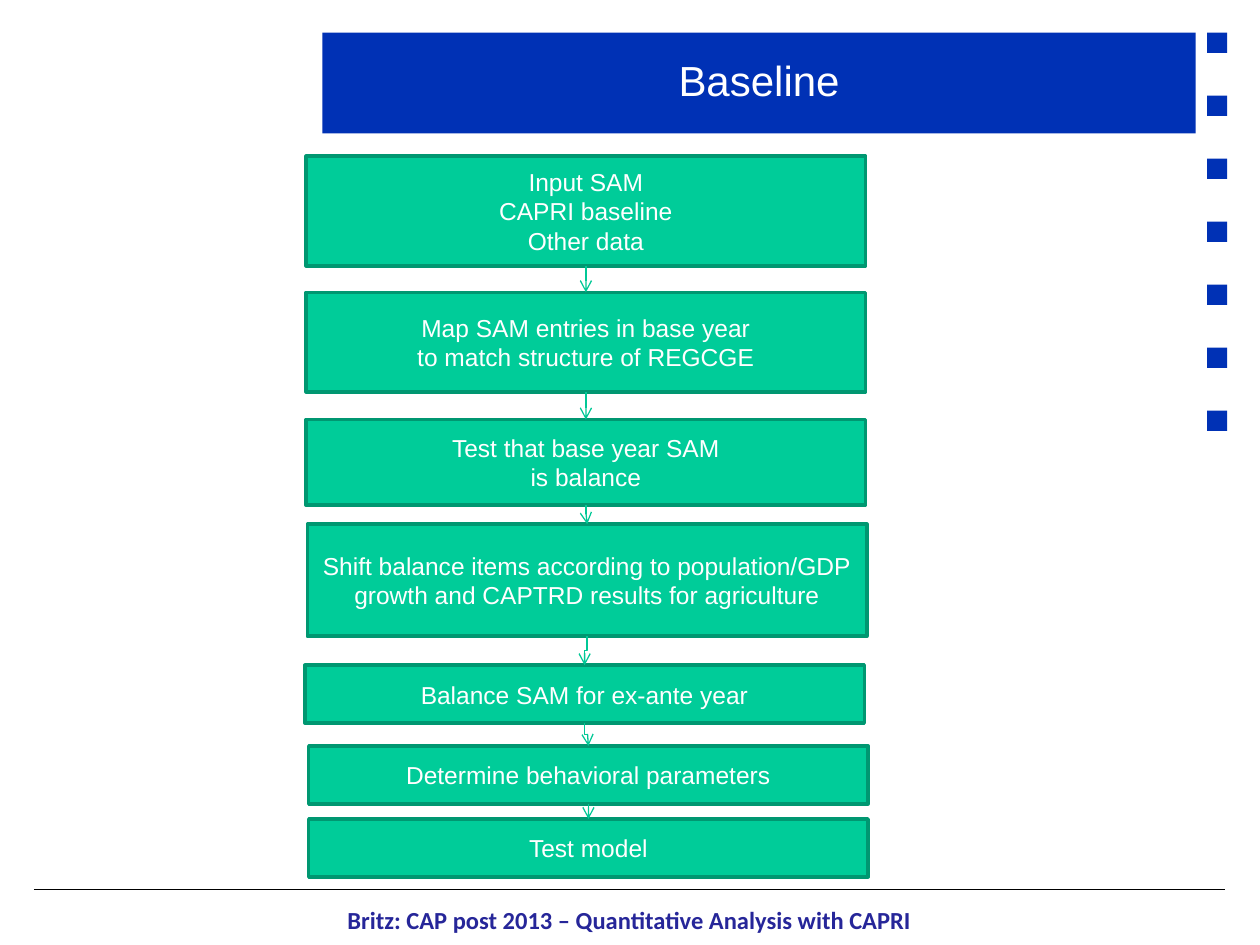
from lxml.etree import SubElement
from pptx import Presentation
from pptx.dml.color import RGBColor
from pptx.enum.shapes import MSO_CONNECTOR, MSO_SHAPE
from pptx.enum.text import MSO_ANCHOR, PP_ALIGN
from pptx.oxml.ns import qn
from pptx.util import Pt

PX = 9144
BLUE, GREEN, DARK_GREEN, ARROW_GREEN = "0031B5", "00CC99", "009771", "00C896"
STEP_WIDTH = 444
STEPS = [
    ("Input SAM\nCAPRI baseline\nOther data", 243, 124, 87),
    ("Map SAM entries in base year\nto match structure of REGCGE", 243, 232, 79),
    ("Test that base year SAM\vis balance", 243, 333, 68),
    ("Shift balance items according to population/GDP\n"
     "growth and CAPTRD results for agriculture", 244, 416, 89),
    ("Balance SAM for ex-ante year", 242, 528, 46),
    ("Determine behavioral parameters", 245, 592, 46),
    ("Test model", 245, 650, 46),
]


def emu(*lengths):
    """Turn px lengths into EMU."""
    return [length * PX for length in lengths]


def color(hex_value):
    """Turn a hex string into a colour."""
    return RGBColor.from_string(hex_value)


def write(frame, text, size=14, font="Arial", ink="FFFFFF", bold=False, spacing=None):
    """Fill a text frame with centred, formatted paragraphs."""
    frame.word_wrap = True
    frame.vertical_anchor = MSO_ANCHOR.MIDDLE
    frame.text = text
    for paragraph in frame.paragraphs:
        paragraph.alignment = PP_ALIGN.CENTER
        paragraph.line_spacing = spacing
        for run in paragraph.runs:
            run.font.size = Pt(size)
            run.font.name = font
            run.font.bold = bold
            run.font.color.rgb = color(ink)


def add_box(slide, left, top, width, height, fill, outline=None):
    """Add a flat rectangle with an optional outline."""
    box = slide.shapes.add_shape(MSO_SHAPE.RECTANGLE, *emu(left, top, width, height))
    box.shadow.inherit = False
    box.fill.solid()
    box.fill.fore_color.rgb = color(fill)
    if outline:
        box.line.color.rgb = color(outline)
        box.line.width = Pt(2)
    else:
        box.line.fill.background()
    return box


def add_line(slide, kind, ends, ink):
    """Add a thin connector without a shadow."""
    line = slide.shapes.add_connector(kind, *emu(*ends))
    line.line.color.rgb = color(ink)
    line.line.width = Pt(0.75)
    SubElement(line._element.spPr, qn("a:effectLst"))
    return line


def add_step_arrow(slide, source, target):
    """Glue a vertical elbow arrow between two steps."""
    arrow = add_line(slide, MSO_CONNECTOR.ELBOW, (0, 0, 0, 0), ARROW_GREEN)
    arrow.begin_connect(source, 2)
    arrow.end_connect(target, 0)
    shift = arrow.end_x - arrow.begin_x
    drop = arrow.end_y - arrow.begin_y
    center_x = (arrow.begin_x + arrow.end_x) // 2
    center_y = (arrow.begin_y + arrow.end_y) // 2
    arrow.left, arrow.top = center_x - drop // 2, center_y - abs(shift) // 2
    arrow.width, arrow.height = drop, abs(shift)
    frame = arrow._element.spPr.find(qn("a:xfrm"))
    frame.set("rot", "16200000" if shift > 0 else "5400000")
    frame.set("flipH", "1" if shift > 0 else "0")
    SubElement(arrow.line._get_or_add_ln(), qn("a:tailEnd"), type="arrow")


def add_title(slide, left, top, width, height):
    """Place the title banner."""
    banner = add_box(slide, left, top, width, height, BLUE)
    write(banner.text_frame, "Baseline", size=24, spacing=0.9)


def add_side_squares(slide, left, top, size, pitch, count):
    """Place the column of evenly spaced squares."""
    for index in range(count):
        add_box(slide, left, top + index * pitch, size, size, BLUE)


def add_footer(slide, left, top, width, height):
    """Place the footer rule and the caption below it."""
    add_line(slide, MSO_CONNECTOR.STRAIGHT, (left, top, left + width, top), "000000")
    caption = slide.shapes.add_textbox(*emu(left, top + 8, width, height - 8))
    frame = caption.text_frame
    frame.margin_left = frame.margin_right = frame.margin_bottom = 0
    frame.margin_top = 8 * PX
    write(frame, "Britz: CAP post 2013 – Quantitative Analysis with CAPRI",
          font="Calibri", ink="262699", bold=True)


def add_flow(slide, steps, width):
    """Place the steps and join each one to the next."""
    boxes = []
    for text, left, top, height in steps:
        box = add_box(slide, left, top, width, height, GREEN, DARK_GREEN)
        write(box.text_frame, text)
        boxes.append(box)
    for source, target in zip(boxes, boxes[1:]):
        add_step_arrow(slide, source, target)


def main():
    """Build and save the slide."""
    deck = Presentation()
    deck.slide_width, deck.slide_height = emu(1000, 750)
    slide = deck.slides.add_slide(deck.slide_layouts[6])
    add_side_squares(slide, 958, 26, 16, 50, 7)
    add_title(slide, 256, 26, 693, 80)
    add_footer(slide, 27, 706, 945, 32)
    add_flow(slide, STEPS, STEP_WIDTH)
    deck.save("out.pptx")


if __name__ == "__main__":
    main()
